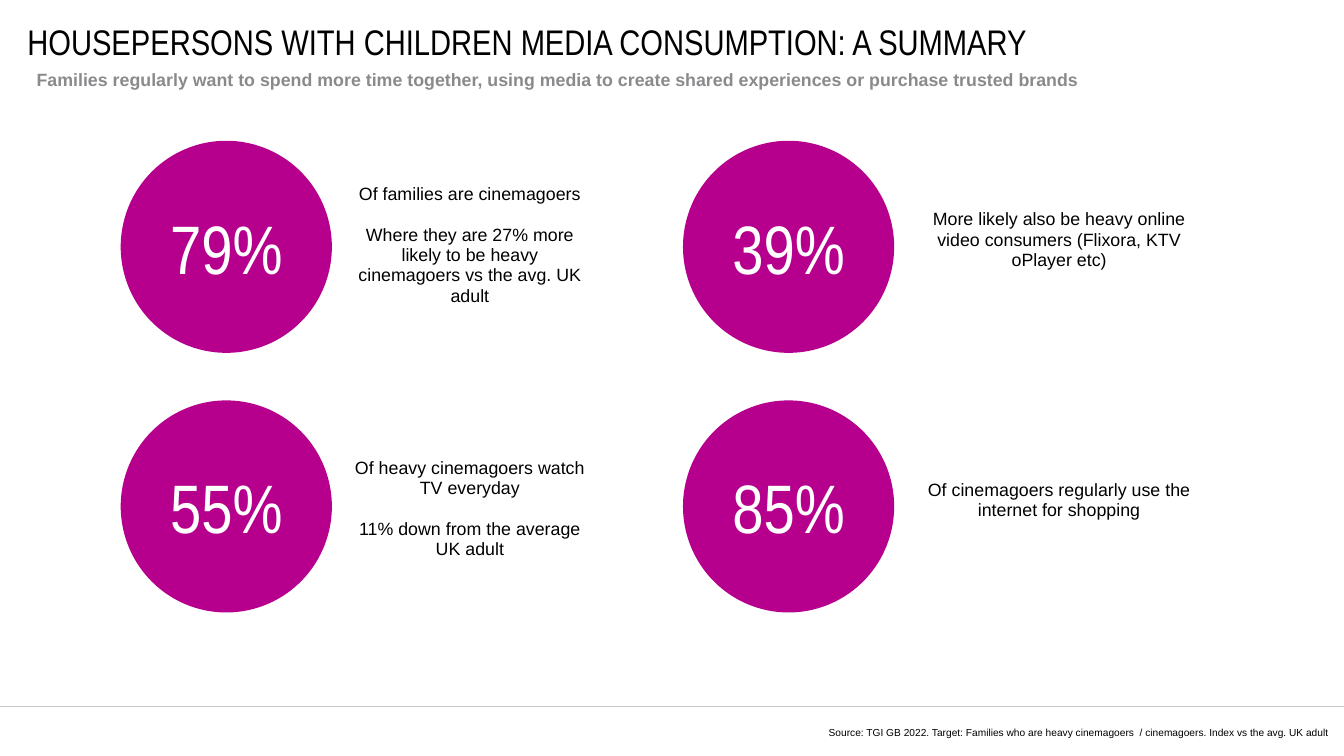
from lxml import etree
from pptx import Presentation
from pptx.dml.color import RGBColor
from pptx.enum.shapes import MSO_CONNECTOR, MSO_SHAPE
from pptx.enum.text import MSO_ANCHOR, PP_ALIGN
from pptx.oxml.ns import qn
from pptx.util import Inches, Pt

COLORS = {
    "magenta": "B6008D",
    "black": "000000",
    "white": "FFFFFF",
    "grey": "8A8A8D",
    "rule": "CAC8C8",
}
TITLE = {"name": "Arial Narrow", "size": Pt(28)}
SUBTITLE = {"name": "Arial", "size": Pt(14), "bold": True}
BODY = {"name": "Arial", "size": Pt(14)}
SOURCE = {"name": "Arial", "size": Pt(8)}
FIGURE = {"name": "Arial Narrow", "size": Pt(54)}


def write(shape, paragraphs, font, color, align=PP_ALIGN.LEFT,
          anchor=MSO_ANCHOR.MIDDLE, line_spacing=None, gap=Pt(0)):
    """Fill a shape with paragraphs in one format, with a gap between them."""
    frame = shape.text_frame
    frame.word_wrap = True
    frame.vertical_anchor = anchor
    for side in ("left", "top", "right", "bottom"):
        setattr(frame, f"margin_{side}", 0)
    for index, text in enumerate(paragraphs):
        paragraph = frame.paragraphs[0] if index == 0 else frame.add_paragraph()
        paragraph.alignment = align
        paragraph.line_spacing = line_spacing
        paragraph.space_before = gap if index else Pt(0)
        run = paragraph.add_run()
        run.text = text
        for attribute, value in font.items():
            setattr(run.font, attribute, value)
        run.font.color.rgb = RGBColor.from_string(COLORS[color])


presentation = Presentation()
presentation.slide_width = Inches(14.7)
presentation.slide_height = Inches(8.27)
slide = presentation.slides.add_slide(presentation.slide_layouts[6])

# Footer rule
rule = slide.shapes.add_connector(
    MSO_CONNECTOR.STRAIGHT, 0, Inches(7.73), Inches(14.7), Inches(7.73))
rule.line.color.rgb = RGBColor.from_string(COLORS["rule"])
rule.line.width = Pt(0.5)
etree.SubElement(rule._element.spPr, qn("a:effectLst"))

# Heading and source
title = slide.shapes.add_textbox(Inches(0.3), Inches(0.3), Inches(13.58), Inches(0.3))
write(title, ["HOUSEPERSONS WITH CHILDREN MEDIA CONSUMPTION: A SUMMARY"], TITLE, "black")

subtitle = slide.shapes.add_textbox(Inches(0.4), Inches(0.78), Inches(13.39), Inches(0.38))
write(subtitle,
      ["Families regularly want to spend more time together, using media to create "
       "shared experiences or purchase trusted brands"],
      SUBTITLE, "grey", anchor=MSO_ANCHOR.TOP, line_spacing=Pt(15))

source = slide.shapes.add_textbox(Inches(8.2), Inches(7.7), Inches(6.34), Inches(0.49))
write(source,
      ["Source: TGI GB 2022. Target: Families who are heavy cinemagoers  / cinemagoers. "
       "Index vs the avg. UK adult"],
      SOURCE, "black", align=PP_ALIGN.RIGHT, line_spacing=Pt(19))

# Statistics: circle left, text left, text width, then (figure, text centre, text) by row
ROW_TOPS = (1.54, 4.38)
TEXT_HEIGHT = 1.4
COLUMNS = [
    (1.32, 3.87, 2.54, [
        ("79%", 2.68, ["Of families are cinemagoers",
                       "Where they are 27% more likely to be heavy cinemagoers "
                       "vs the avg. UK adult"]),
        ("55%", 5.56, ["Of heavy cinemagoers watch TV everyday",
                       "11% down from the average UK adult"]),
    ]),
    (7.47, 9.95, 3.27, [
        ("39%", 2.62, ["More likely also be heavy online video consumers "
                       "(Flixora, KTV oPlayer etc)"]),
        ("85%", 5.47, ["Of cinemagoers regularly use the internet for shopping"]),
    ]),
]
for circle_left, text_left, text_width, statistics in COLUMNS:
    for row_top, (figure, text_centre, texts) in zip(ROW_TOPS, statistics):
        circle = slide.shapes.add_shape(
            MSO_SHAPE.OVAL, Inches(circle_left), Inches(row_top), Inches(2.31), Inches(2.32))
        circle.shadow.inherit = False
        circle.fill.solid()
        circle.fill.fore_color.rgb = RGBColor.from_string(COLORS["magenta"])
        circle.line.fill.background()
        write(circle, [figure], FIGURE, "white", align=PP_ALIGN.CENTER)

        description = slide.shapes.add_textbox(
            Inches(text_left), Inches(text_centre - TEXT_HEIGHT / 2),
            Inches(text_width), Inches(TEXT_HEIGHT))
        write(description, texts, BODY, "black", align=PP_ALIGN.CENTER,
              line_spacing=Pt(16), gap=Pt(16))

presentation.save("out.pptx")
